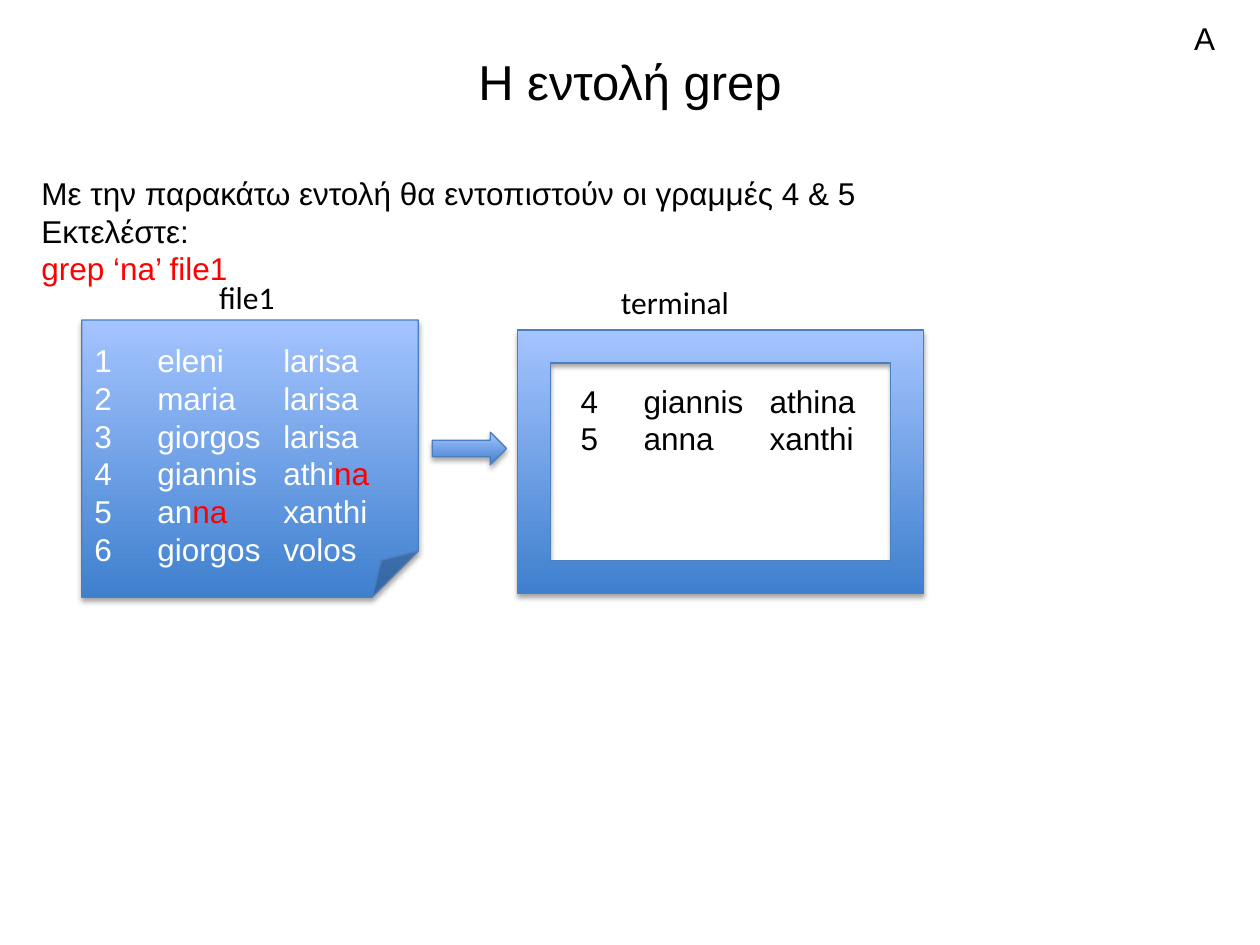
"""Build the slide that explains the grep command."""
from lxml import etree
from pptx import Presentation
from pptx import util as u
from pptx.dml.color import RGBColor
from pptx.enum import shapes, text
from pptx.oxml.ns import qn

BLACK, WHITE, RED = "000000", "FFFFFF", "FF0000"


def color(value):
    return RGBColor.from_string(value)


def write(frame, lines, font="Arial", size=18, align=text.PP_ALIGN.LEFT, tabs=()):
    for i, line in enumerate(lines):
        paragraph = frame.paragraphs[0] if i == 0 else frame.add_paragraph()
        paragraph.alignment = align
        if tabs:
            stops = etree.SubElement(paragraph._p.get_or_add_pPr(), qn("a:tabLst"))
            for stop in tabs:
                etree.SubElement(stops, qn("a:tab"), pos=str(u.Inches(stop)), algn="l")
        for words, shade in line:
            run = paragraph.add_run()
            run.text = words
            run.font.name = font
            run.font.size = u.Pt(size)
            run.font.color.rgb = color(shade)


prs = Presentation()
prs.slide_width, prs.slide_height = u.Inches(10), u.Inches(7.5)
slide = prs.slides.add_slide(prs.slide_layouts[6])
columns = (0.5, 1.5)

title = slide.shapes.add_textbox(u.Inches(0.5), u.Inches(0.3), u.Inches(9), u.Inches(0.68)).text_frame
title.word_wrap = True
title.vertical_anchor = text.MSO_ANCHOR.MIDDLE
write(title, [[("Η εντολή grep", BLACK)]], size=28, align=text.PP_ALIGN.CENTER)

panels = []
for preset, box in (
    (shapes.MSO_SHAPE.FOLDED_CORNER, (0.65, 2.54, 2.67, 2.2)),
    (shapes.MSO_SHAPE.RIGHT_ARROW, (3.43, 3.43, 0.59, 0.26)),
    (shapes.MSO_SHAPE.FRAME, (4.11, 2.62, 3.22, 2.09)),
):
    panel = slide.shapes.add_shape(preset, *map(u.Inches, box))
    panel.fill.gradient()
    panel.fill.gradient_angle = 90
    for stop, shade in zip(panel.fill.gradient_stops, ("3F80CE", "A4C4FF")):
        stop.color.rgb = color(shade)
    panel.fill.gradient_stops[0].position = 0
    panel.fill.gradient_stops[1].position = 1
    panel.line.color.rgb = color("4B7EBC")
    panel.line.width = u.Pt(0.75)
    panel.shadow.inherit = False
    effects = panel._element.spPr.find(qn("a:effectLst"))
    shadow = etree.SubElement(effects, qn("a:outerShdw"), blurRad=str(u.Pt(3.1)),
                              dist=str(u.Pt(1.8)), dir="5400000", rotWithShape="0")
    tint = etree.SubElement(shadow, qn("a:srgbClr"), val=BLACK)
    etree.SubElement(tint, qn("a:alpha"), val="35000")
    panels.append(panel)

listing = panels[0].text_frame
listing.word_wrap = True
listing.vertical_anchor = text.MSO_ANCHOR.MIDDLE
listing.margin_top, listing.margin_bottom = u.Inches(0.3), 0
write(listing, [
    [("1\teleni\tlarisa", WHITE)],
    [("2\tmaria\tlarisa", WHITE)],
    [("3\tgiorgos\tlarisa", WHITE)],
    [("4\tgiannis\tathi", WHITE), ("na", RED)],
    [("5\tan", WHITE), ("na\t", RED), ("xanthi", WHITE)],
    [("6 \tgiorgos\tvolos", WHITE)],
], tabs=columns)

for box, wrap, font, tabs, lines in (
    ((0.23, 1.33, 9.61, 1.01), True, "Arial", (), [
        [("Με την παρακάτω εντολή θα εντοπιστούν οι γραμμές 4 & 5", BLACK)],
        [("Εκτελέστε:", BLACK)],
        [("grep ‘na’ file1", RED)],
    ]),
    ((4.51, 2.98, 2.4, 0.71), False, "Arial", columns, [
        [("4\tgiannis\tathina", BLACK)],
        [("5\tanna\txanthi", BLACK)],
    ]),
    ((1.64, 2.16, 0.65, 0.4), False, "Calibri", (), [[("file1", BLACK)]]),
    ((4.83, 2.2, 1.07, 0.4), False, "Calibri", (), [[("terminal", BLACK)]]),
    ((9.38, 0.1, 0.5, 0.4), True, "Arial", (), [[("Α", BLACK)]]),
):
    frame = slide.shapes.add_textbox(*map(u.Inches, box)).text_frame
    frame.word_wrap = wrap
    frame.auto_size = text.MSO_AUTO_SIZE.SHAPE_TO_FIT_TEXT
    write(frame, lines, font=font, tabs=tabs)

prs.save("out.pptx")
